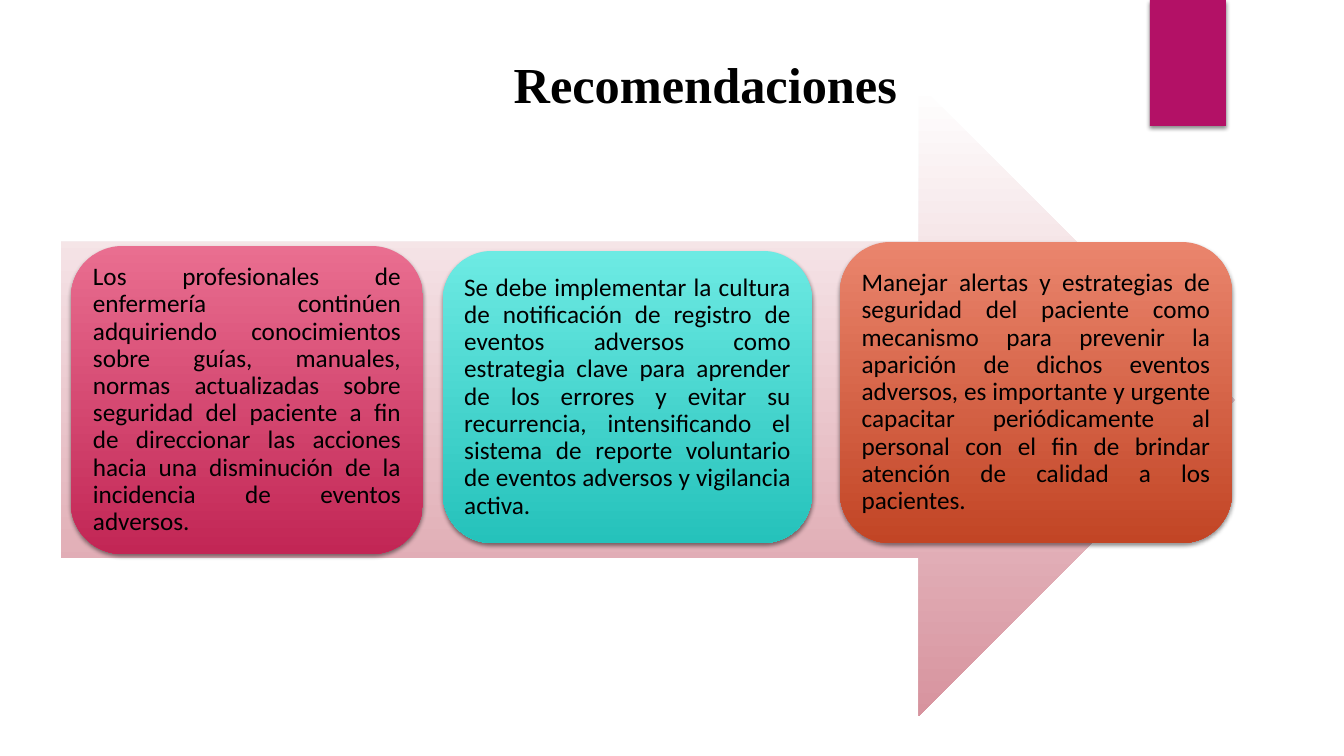
from lxml import etree
from pptx import Presentation
from pptx.dml.color import RGBColor
from pptx.enum.shapes import MSO_SHAPE
from pptx.enum.text import MSO_ANCHOR, MSO_AUTO_SIZE, PP_ALIGN
from pptx.oxml.ns import qn
from pptx.util import Pt

RECT, ARROW, ROUND = MSO_SHAPE.RECTANGLE, MSO_SHAPE.RIGHT_ARROW, MSO_SHAPE.ROUNDED_RECTANGLE
TOP, MIDDLE = MSO_ANCHOR.TOP, MSO_ANCHOR.MIDDLE
CENTER, JUSTIFY = PP_ALIGN.CENTER, PP_ALIGN.JUSTIFY
NO_FIT = MSO_AUTO_SIZE.NONE

BLACK = RGBColor(0x00, 0x00, 0x00)
WHITE = RGBColor(0xFF, 0xFF, 0xFF)
MAGENTA = RGBColor(0xB3, 0x11, 0x66)
ROSE = RGBColor(0xD7, 0x93, 0x9E)
PINK = (RGBColor(0xE9, 0x6E, 0x90), RGBColor(0xC2, 0x26, 0x55))
TEAL = (RGBColor(0x6D, 0xEA, 0xE3), RGBColor(0x25, 0xC2, 0xBB))
ORANGE = (RGBColor(0xEA, 0x85, 0x6D), RGBColor(0xC2, 0x45, 0x25))

TITLE = "Recomendaciones"
TITLE_BOX = (451, 48, 509, 72)
TAB_BOX = (1150, 0, 76, 126)
ARROW_BOX = (61, 84, 1174, 632)
CARDS = [
    ((71, 246, 352, 308), PINK,
     "Los profesionales de enfermería continúen adquiriendo conocimientos sobre guías, "
     "manuales, normas actualizadas sobre seguridad del paciente a fin de direccionar las "
     "acciones hacia una disminución de la incidencia de eventos adversos."),
    ((443, 251, 369, 292), TEAL,
     "Se debe implementar la cultura de notificación de registro de eventos adversos como "
     "estrategia clave para aprender de los errores y evitar su recurrencia, intensificando "
     "el sistema de reporte voluntario de eventos adversos y vigilancia activa."),
    ((840, 242, 392, 301), ORANGE,
     "Manejar alertas y estrategias de seguridad del paciente como mecanismo para prevenir "
     "la aparición de dichos eventos adversos, es importante y urgente capacitar "
     "periódicamente al personal con el fin de brindar atención de calidad a los pacientes."),
]
CARD_INSET = 7


def px(n):
    return round(n * 914400 / 100.8)


def add_shape(s, kind, box):
    sp = s.shapes.add_shape(kind, *map(px, box))
    sp.shadow.inherit = False
    sp.line.fill.background()
    return sp


def fill_downward(sp, colors):
    sp.fill.gradient()
    sp.fill.gradient_angle = 270
    for stop, color in zip(sp.fill.gradient_stops, colors):
        stop.color.rgb = color


def add_soft_shadow(sp):
    effects = sp._element.spPr.find(qn("a:effectLst"))
    shadow = etree.SubElement(effects, qn("a:outerShdw"), blurRad=str(Pt(3)), dist=str(Pt(2)),
                              dir="5400000", algn="ctr", rotWithShape="0")
    color = etree.SubElement(shadow, qn("a:srgbClr"), val=str(BLACK))
    etree.SubElement(color, qn("a:alpha"), val="45000")


def write(tf, text, font, size, align, anchor, bold=False):
    tf.word_wrap = True
    tf.auto_size = NO_FIT
    tf.vertical_anchor = anchor
    tf.text = text
    p = tf.paragraphs[0]
    p.alignment = align
    p.font.name, p.font.size, p.font.bold = font, Pt(size), bold
    p.font.color.rgb = BLACK
    return p


def main():
    prs = Presentation()
    prs.slide_width, prs.slide_height = px(1344), px(756)
    s = prs.slides.add_slide(prs.slide_layouts[5])

    title = s.shapes.title
    title.left, title.top, title.width, title.height = map(px, TITLE_BOX)
    write(title.text_frame, TITLE, "Times New Roman", 36, CENTER, TOP, bold=True)

    tab = add_shape(s, RECT, TAB_BOX)
    tab.fill.solid()
    tab.fill.fore_color.rgb = MAGENTA
    add_soft_shadow(tab)

    fill_downward(add_shape(s, ARROW, ARROW_BOX), (WHITE, ROSE))

    for box, colors, text in CARDS:
        card = add_shape(s, ROUND, box)
        fill_downward(card, colors)
        add_soft_shadow(card)
        tf = card.text_frame
        tf.margin_left = tf.margin_right = tf.margin_top = tf.margin_bottom = px(CARD_INSET)
        write(tf, text, "Calibri", 18, JUSTIFY, MIDDLE).line_spacing = 0.9

    prs.save("out.pptx")


if __name__ == "__main__":
    main()
